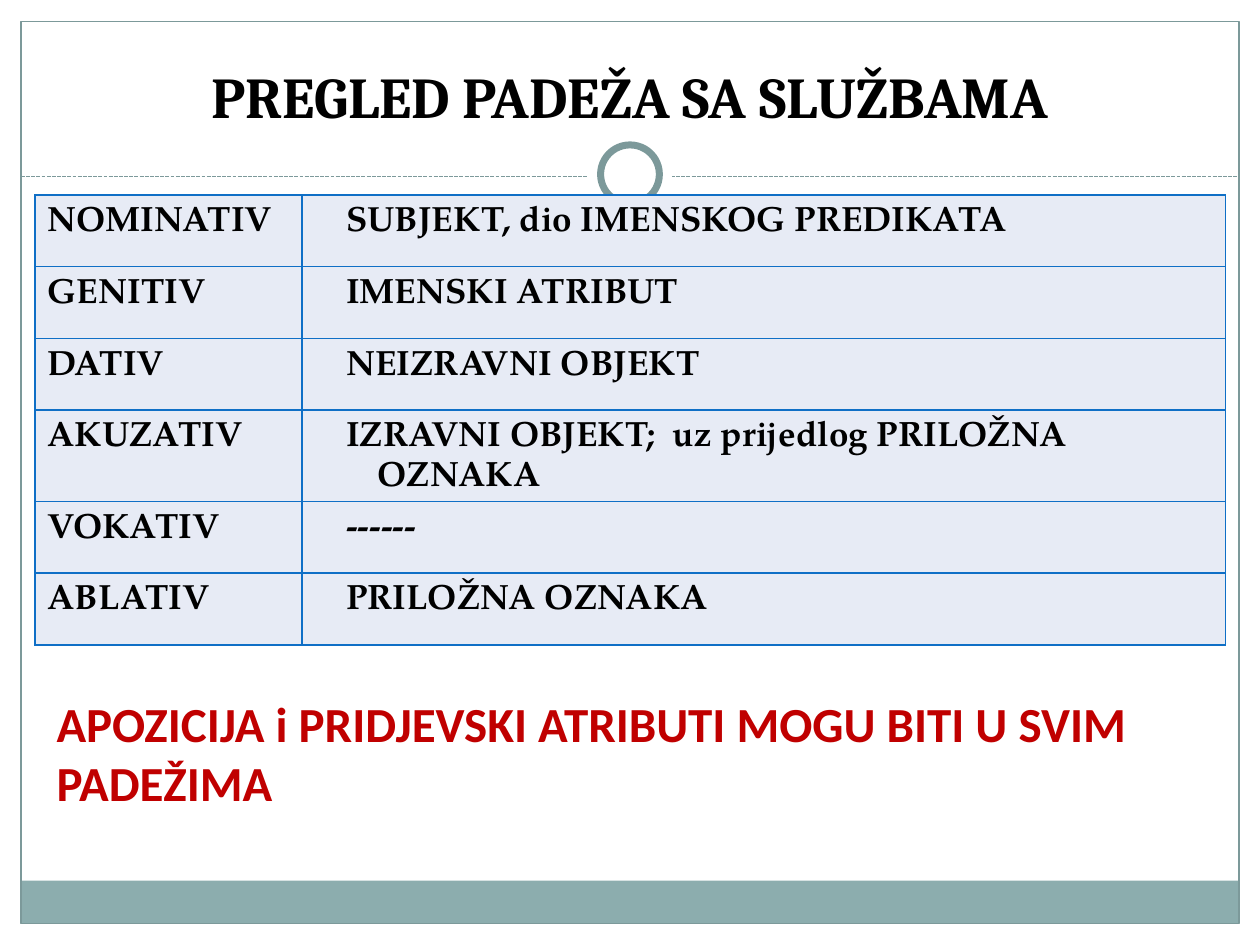
"""Build the slide that lists the Latin cases with their functions."""
from lxml.etree import SubElement
from pptx import Presentation
from pptx.dml.color import RGBColor
from pptx.enum.dml import MSO_LINE
from pptx.enum.shapes import MSO_CONNECTOR, MSO_SHAPE
from pptx.enum.text import MSO_ANCHOR, PP_ALIGN
from pptx.oxml.ns import qn
from pptx.util import Pt


def rgb(value):
    return RGBColor.from_string(value)


def write(tf, text, name, size, color):
    p = tf.paragraphs[0]
    r = p.add_run()
    r.text = text
    r.font.color.rgb = rgb(color)
    for key, value in {"name": name, "size": Pt(size), "bold": True}.items():
        setattr(r.font, key, value)
    return p


prs = Presentation()
prs.slide_width, prs.slide_height = Pt(720), Pt(540)
s = prs.slides.add_slide(prs.slide_layouts[5])

cxn = s.shapes.add_connector(MSO_CONNECTOR.STRAIGHT, Pt(12), Pt(100.8), Pt(708), Pt(100.8))
cxn.line.color.rgb = rgb("7C999A")
cxn.line.width = Pt(0.75)
cxn.line.dash_style = MSO_LINE.SQUARE_DOT
SubElement(cxn._element.spPr, qn("a:effectLst"))

decor = [
    (MSO_SHAPE.RECTANGLE, (11.8, 503.3, 695.8, 24.5), "8CADAE", None),
    (MSO_SHAPE.RECTANGLE, (12, 12.2, 696, 515.6), None, 0.75),
    (MSO_SHAPE.OVAL, (336, 75.6, 48, 48), "FFFFFF", None),
    (MSO_SHAPE.OVAL, (343.2, 82.8, 33.6, 33.6), "FFFFFF", 4),
]
for kind, box, fill, width in decor:
    sp = s.shapes.add_shape(kind, *map(Pt, box))
    sp.shadow.inherit = False
    if fill:
        sp.fill.solid()
        sp.fill.fore_color.rgb = rgb(fill)
    else:
        sp.fill.background()
    if width:
        sp.line.color.rgb = rgb("7C999A")
        sp.line.width = Pt(width)
    else:
        sp.line.fill.background()

title = s.shapes.title
s.shapes._spTree.append(title._element)
for key, value in {"left": 24, "top": 18, "width": 672, "height": 60}.items():
    setattr(title, key, Pt(value))
title.text_frame.vertical_anchor = MSO_ANCHOR.BOTTOM
p = write(title.text_frame, "PREGLED PADEŽA SA SLUŽBAMA", "Cambria", 33, "000000")
p.alignment = PP_ALIGN.CENTER

cases = [
    ("NOMINATIV", "SUBJEKT, dio IMENSKOG PREDIKATA"),
    ("GENITIV", "IMENSKI ATRIBUT"),
    ("DATIV", "NEIZRAVNI OBJEKT"),
    ("AKUZATIV", "IZRAVNI OBJEKT;  uz prijedlog PRILOŽNA OZNAKA"),
    ("VOKATIV", "------"),
    ("ABLATIV", "PRILOŽNA OZNAKA"),
]
table = s.shapes.add_table(len(cases), 2, Pt(20), Pt(111.4), Pt(680.4), Pt(246)).table
for col, width in zip(table.columns, (152.6, 527.8)):
    col.width = Pt(width)
for i, case in enumerate(cases):
    table.rows[i].height = Pt(41)
    for j, text in enumerate(case):
        cell = table.cell(i, j)
        p = write(cell.text_frame, text, "TeX Gyre Pagella", 20, "000000")
        p.line_spacing = 1.15
        if j == 1:
            pPr = p._p.get_or_add_pPr()
            pPr.set("marL", str(Pt(36)))
            pPr.set("indent", str(Pt(-18)))
        tcPr = cell._tc.get_or_add_tcPr()
        for side in ("lnL", "lnR", "lnT", "lnB"):
            ln = SubElement(tcPr, qn(f"a:{side}"), w=str(Pt(1)))
            SubElement(SubElement(ln, qn("a:solidFill")), qn("a:srgbClr"), val="0F6FC6")
        cell.fill.solid()
        cell.fill.fore_color.rgb = rgb("E7EBF5")

tf = s.shapes.add_textbox(Pt(25.2), Pt(392.4), Pt(694.8), Pt(75)).text_frame
tf.word_wrap = True
tf.vertical_anchor = MSO_ANCHOR.MIDDLE
write(tf, "APOZICIJA i PRIDJEVSKI ATRIBUTI MOGU BITI U SVIM PADEŽIMA", "Calibri", 28, "C00000")

prs.save("out.pptx")
